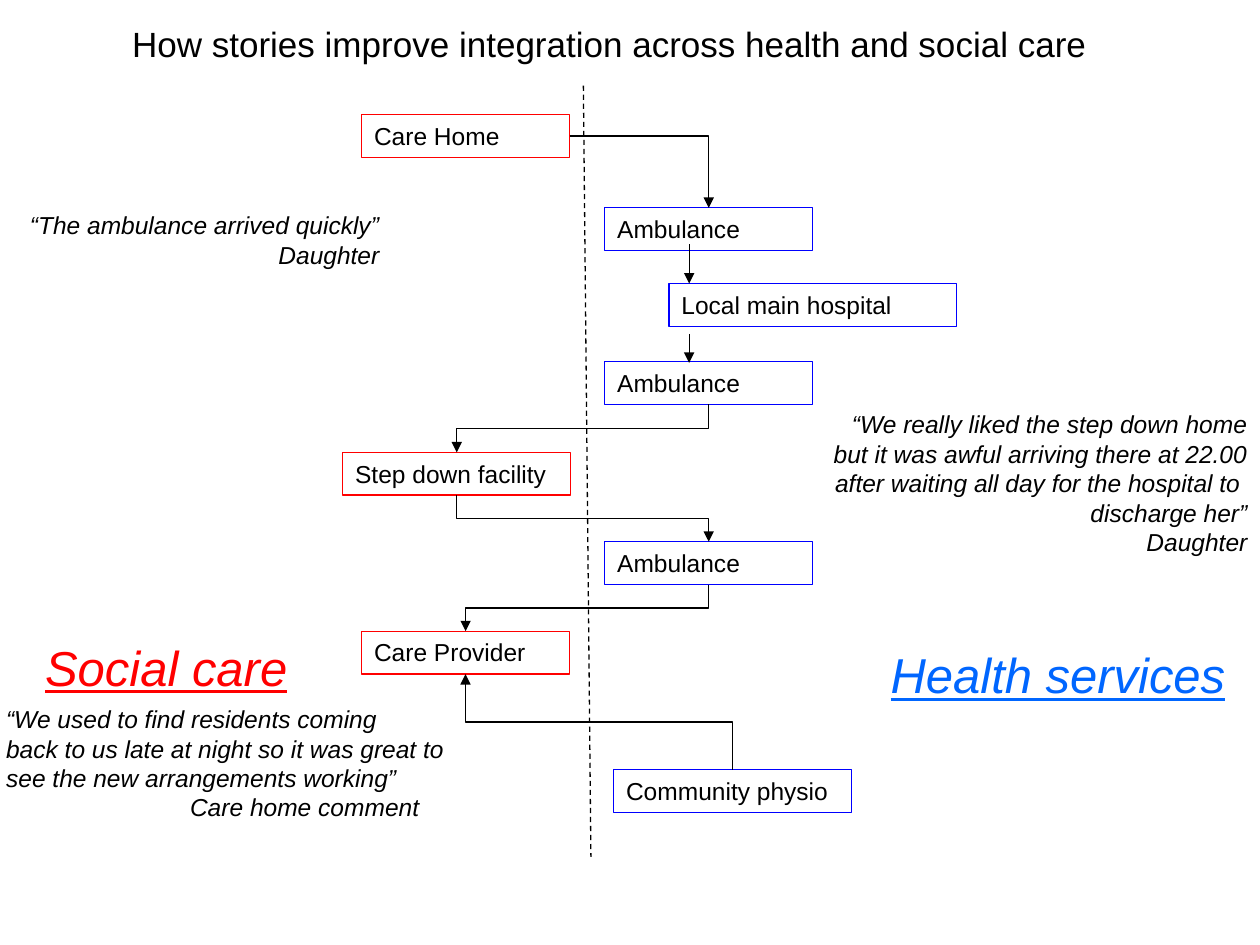
"""Build the slide on how stories improve integration across health and social care."""
from lxml.etree import SubElement
from pptx import Presentation
from pptx.dml.color import RGBColor
from pptx.enum.dml import MSO_LINE
from pptx.enum.shapes import MSO_CONNECTOR as LINK, MSO_SHAPE
from pptx.enum.text import MSO_ANCHOR, PP_ALIGN as ALIGN
from pptx.oxml.ns import qn
from pptx.util import Inches, Pt

COLORS = {"text": "000000", "social": "FF0000", "health": "0000FF", "health title": "0066FF"}
TOP, LEFT, BOTTOM, RIGHT = range(4)
STEP_HEIGHT = 0.34

STEPS = {
    "care home": ("Care Home", "social", 2.87, 0.91, 1.65),
    "first ambulance": ("Ambulance", "health", 4.8, 1.65, 1.65),
    "hospital": ("Local main hospital", "health", 5.31, 2.25, 2.28),
    "second ambulance": ("Ambulance", "health", 4.8, 2.87, 1.65),
    "step down": ("Step down facility", "social", 2.72, 3.59, 1.81),
    "third ambulance": ("Ambulance", "health", 4.8, 4.3, 1.65),
    "care provider": ("Care Provider", "social", 2.87, 5.01, 1.65),
    "physio": ("Community physio", "health", 4.87, 6.11, 1.89),
}
VERTICAL_ROUTES = [
    ("second ambulance", BOTTOM, "step down", TOP),
    ("step down", BOTTOM, "third ambulance", TOP),
    ("third ambulance", BOTTOM, "care provider", TOP),
    ("physio", TOP, "care provider", BOTTOM),
]
AMBULANCE_QUOTE = ["“The ambulance arrived quickly”", "Daughter"]
STEP_DOWN_QUOTE = [
    "“We really liked the step down home",
    "but it was awful arriving there at 22.00",
    "after waiting all day for the hospital to ",
    "discharge her”",
    "Daughter",
]
CARE_HOME_QUOTE = [
    "“We used to find residents coming",
    "back to us late at night so it was great to",
    "see the new arrangements working”",
    "Care home comment",
]


def rgb(name):
    """Return the named colour."""
    return RGBColor.from_string(COLORS[name])


def add_words(paragraph, words, size=14, color="text", italic=False, underline=False):
    """Add one styled run to a paragraph."""
    run = paragraph.add_run()
    run.text = words
    font = run.font
    font.name, font.size = "Arial", Pt(size)
    font.italic, font.underline = italic, underline
    font.color.rgb = rgb(color)


def add_step(slide, label, service, left, top, width):
    """Add an outlined box for one step of the journey."""
    step = slide.shapes.add_shape(
        MSO_SHAPE.RECTANGLE, Inches(left), Inches(top), Inches(width), Inches(STEP_HEIGHT))
    step.shadow.inherit = False
    step.fill.background()
    step.line.color.rgb = rgb(service)
    step.line.width = Pt(0.75)
    step.text_frame.vertical_anchor = MSO_ANCHOR.TOP
    paragraph = step.text_frame.paragraphs[0]
    paragraph.alignment = ALIGN.LEFT
    add_words(paragraph, label)
    return step


def add_text(slide, lines, left, top, width, height, align=ALIGN.LEFT, **style):
    """Add a text box with one paragraph a line and return its paragraphs."""
    frame = slide.shapes.add_textbox(
        Inches(left), Inches(top), Inches(width), Inches(height)).text_frame
    frame.word_wrap = False
    for number, line in enumerate(lines):
        paragraph = frame.add_paragraph() if number else frame.paragraphs[0]
        paragraph.alignment = align
        add_words(paragraph, line, **style)
    return frame.paragraphs


def add_line(slide, kind, start=(0, 0), end=(0, 0), arrow=True):
    """Add a thin black connector, with an arrowhead at its end if wanted."""
    link = slide.shapes.add_connector(kind, *map(Inches, (*start, *end)))
    link.line.color.rgb = rgb("text")
    link.line.width = Pt(0.75)
    if arrow:
        SubElement(link.line._get_or_add_ln(), qn("a:tailEnd"), type="triangle")
    SubElement(link._element.spPr, qn("a:effectLst"))
    return link


def add_route(slide, origin, origin_side, target, target_side):
    """Join two steps with an elbow arrow."""
    route = add_line(slide, LINK.ELBOW)
    route.begin_connect(origin, origin_side)
    route.end_connect(target, target_side)
    return route


def turn_vertical(route):
    """Make an elbow leave and arrive vertically."""
    across = route.end_x - route.begin_x
    down = route.end_y - route.begin_y
    middle_x = (route.begin_x + route.end_x) // 2
    middle_y = (route.begin_y + route.end_y) // 2
    route.width, route.height = abs(down), abs(across)
    route.left = middle_x - abs(down) // 2
    route.top = middle_y - abs(across) // 2
    xfrm = route._element.spPr.find(qn("a:xfrm"))
    xfrm.set("rot", str(90 * 60000))
    xfrm.set("flipH", str(int(down < 0)))
    xfrm.set("flipV", str(int(across > 0)))


def main():
    """Build and save the slide."""
    deck = Presentation()
    deck.slide_width, deck.slide_height = Inches(10), Inches(7.5)
    slide = deck.slides.add_slide(deck.slide_layouts[6])

    steps = {key: add_step(slide, *details) for key, details in STEPS.items()}
    corner = add_route(slide, steps["care home"], RIGHT, steps["first ambulance"], TOP)
    corner._element.spPr.find(qn("a:prstGeom")).set("prst", "bentConnector2")
    for start_y, end_y in [(1.94, 2.25), (2.65, 2.88)]:
        add_line(slide, LINK.STRAIGHT, (5.47, start_y), (5.47, end_y))
    for origin, origin_side, target, target_side in VERTICAL_ROUTES:
        turn_vertical(add_route(slide, steps[origin], origin_side, steps[target], target_side))

    add_text(slide, AMBULANCE_QUOTE, 0.12, 1.62, 2.99, 0.57, ALIGN.RIGHT, italic=True)
    add_text(slide, STEP_DOWN_QUOTE, 6.5, 3.2, 3.5, 1.28, ALIGN.RIGHT, italic=True)
    comment = add_text(slide, CARE_HOME_QUOTE, -0.05, 5.54, 3.75, 1.04, italic=True)
    comment[-1]._p.get_or_add_pPr().set("marL", str(Inches(1.46)))

    divider = add_line(slide, LINK.STRAIGHT, (4.63, 0.68), (4.69, 6.8), arrow=False)
    divider.line.dash_style = MSO_LINE.DASH
    add_text(slide, ["How stories improve integration across health and social care"],
             0.95, 0.13, 7.84, 0.44, size=20)
    add_text(slide, ["Health services"], 6.97, 5.07, 2.89, 0.57,
             size=28, color="health title", italic=True, underline=True)
    add_text(slide, ["Social care"], 0.26, 5.01, 2.15, 0.57,
             size=28, color="social", italic=True, underline=True)
    deck.save("out.pptx")


if __name__ == "__main__":
    main()
